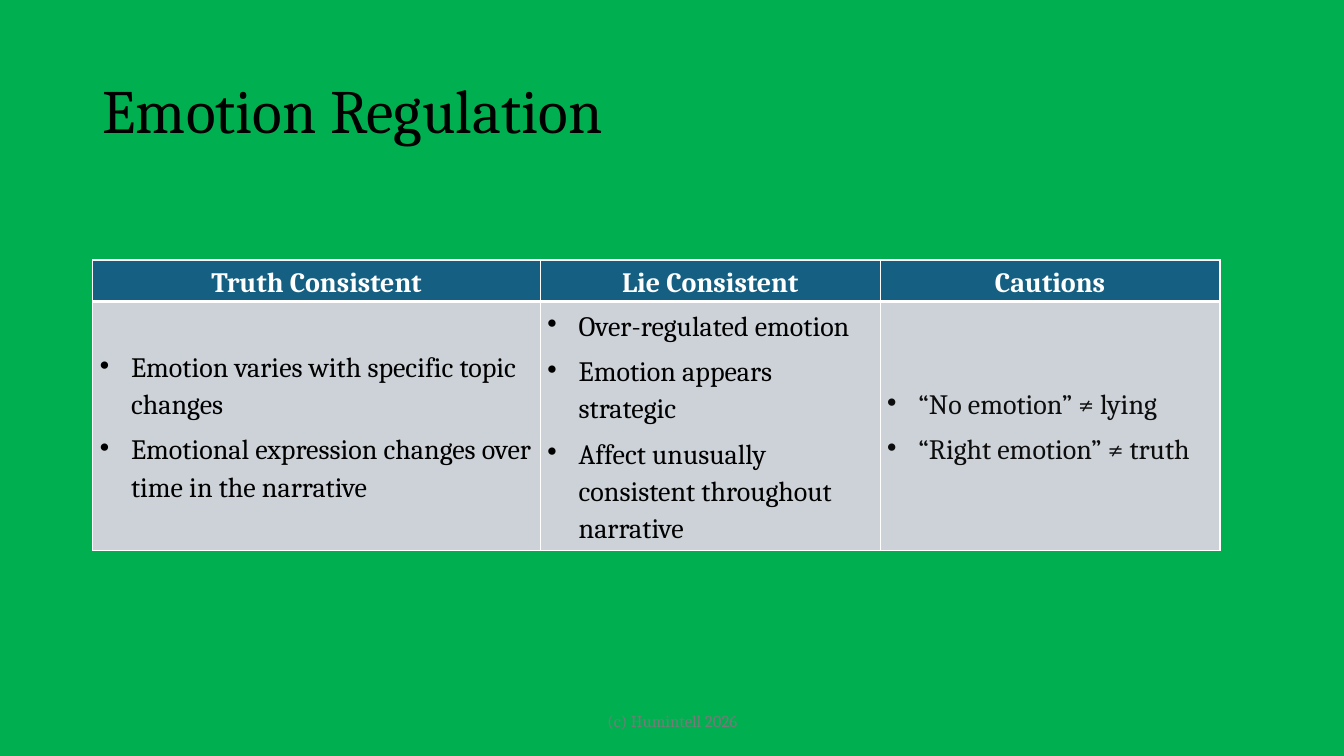
import pptx
import pptx.dml.color
import pptx.enum.text
import pptx.oxml
import pptx.oxml.ns
import pptx.util

Inches = pptx.util.Inches
Pt = pptx.util.Pt
ALIGN = pptx.enum.text.PP_ALIGN
MIDDLE = pptx.enum.text.MSO_ANCHOR.MIDDLE
FONT = "Cambria"
COLORS = {
    "background": "00B050", "header": "156082", "body": "CCD2D8",
    "white": "FFFFFF", "black": "000000", "caution": "0D0D0D", "footer": "797979",
}
COLUMNS = [
    ("Truth Consistent", 4.44, "black", [
        "Emotion varies with specific topic changes",
        "Emotional expression changes over time in the narrative"]),
    ("Lie Consistent", 3.37, "black", [
        "Over-regulated emotion",
        "Emotion appears strategic",
        "Affect unusually consistent throughout narrative"]),
    ("Cautions", 3.37, "caution", [
        "“No emotion” ≠ lying",
        "“Right emotion” ≠ truth"]),
]


def rgb(name):
    """Return the palette colour called name."""
    return pptx.dml.color.RGBColor.from_string(COLORS[name])


def format_runs(p, size, color, bold=False):
    """Set the font of every run in a paragraph."""
    for r in p.runs:
        r.font.name = FONT
        r.font.size = Pt(size)
        r.font.bold = bold
        r.font.color.rgb = rgb(color)


def add_line(slide, box, text, size, color, align, spacing=1.0):
    """Place one vertically centred line of text in box."""
    tf = slide.shapes.add_textbox(*map(Inches, box)).text_frame
    tf.word_wrap = True
    tf.vertical_anchor = MIDDLE
    p = tf.paragraphs[0]
    p.text = text
    p.alignment = align
    p.line_spacing = spacing
    format_runs(p, size, color)


def add_bullet(p):
    """Give a paragraph a round bullet with a hanging indent."""
    pPr = p._p.get_or_add_pPr()
    pPr.set("marL", str(Inches(0.31)))
    pPr.set("indent", str(-Inches(0.31)))
    bullet = pptx.oxml.parse_xml(
        f'<a:buChar {pptx.oxml.ns.nsdecls("a")} char="•"/>')
    pPr.append(bullet)


def set_borders(cell, top, bottom):
    """Draw white borders, with the given top and bottom widths in points."""
    tcPr = cell._tc.get_or_add_tcPr()
    sides = [("lnL", 1), ("lnR", 1), ("lnT", top), ("lnB", bottom)]
    for i, (side, width) in enumerate(sides):
        tcPr.insert(i, pptx.oxml.parse_xml(
            f'<a:{side} {pptx.oxml.ns.nsdecls("a")} w="{Pt(width)}"><a:solidFill>'
            f'<a:srgbClr val="{COLORS["white"]}"/></a:solidFill></a:{side}>'))


def fill_cell(cell, lines, fill, color, header):
    """Write the lines into a header or bulleted cell."""
    cell.fill.solid()
    cell.fill.fore_color.rgb = rgb(fill)
    set_borders(cell, *((1, 3) if header else (3, 1)))
    cell.vertical_anchor = MIDDLE
    cell.margin_left = cell.margin_right = Inches(0.07)
    cell.margin_top = cell.margin_bottom = 0
    cell.text_frame.text = "\n".join(lines)
    for p in cell.text_frame.paragraphs:
        if header:
            p.alignment = ALIGN.CENTER
        else:
            add_bullet(p)
        p.line_spacing = 1.15
        p.space_after = Pt(6)
        format_runs(p, 20, color, header)


def add_comparison(slide, box):
    """Place the table of truth, lie and caution signs in box."""
    left, top, width, height = map(Inches, box)
    table = slide.shapes.add_table(2, len(COLUMNS), left, top, width, height).table
    table.rows[0].height = Inches(0.41)
    table.rows[1].height = height - Inches(0.41)
    for col, (heading, col_width, color, points) in enumerate(COLUMNS):
        table.columns[col].width = Inches(col_width)
        fill_cell(table.cell(0, col), [heading], "header", "white", True)
        fill_cell(table.cell(1, col), points, "body", color, False)


def main():
    """Build the slide and save it."""
    prs = pptx.Presentation()
    prs.slide_width, prs.slide_height = Inches(13.33), Inches(7.5)
    slide = prs.slides.add_slide(prs.slide_layouts[6])
    slide.background.fill.solid()
    slide.background.fill.fore_color.rgb = rgb("background")
    add_line(slide, (0.92, 0.4, 11.5, 1.45), "Emotion Regulation",
             44, "black", ALIGN.LEFT, 0.9)
    add_comparison(slide, (0.92, 2.58, 11.18, 2.78))
    add_line(slide, (4.42, 6.95, 4.5, 0.4), "(c) Humintell 2026",
             12, "footer", ALIGN.CENTER)
    prs.save("out.pptx")


if __name__ == "__main__":
    main()
